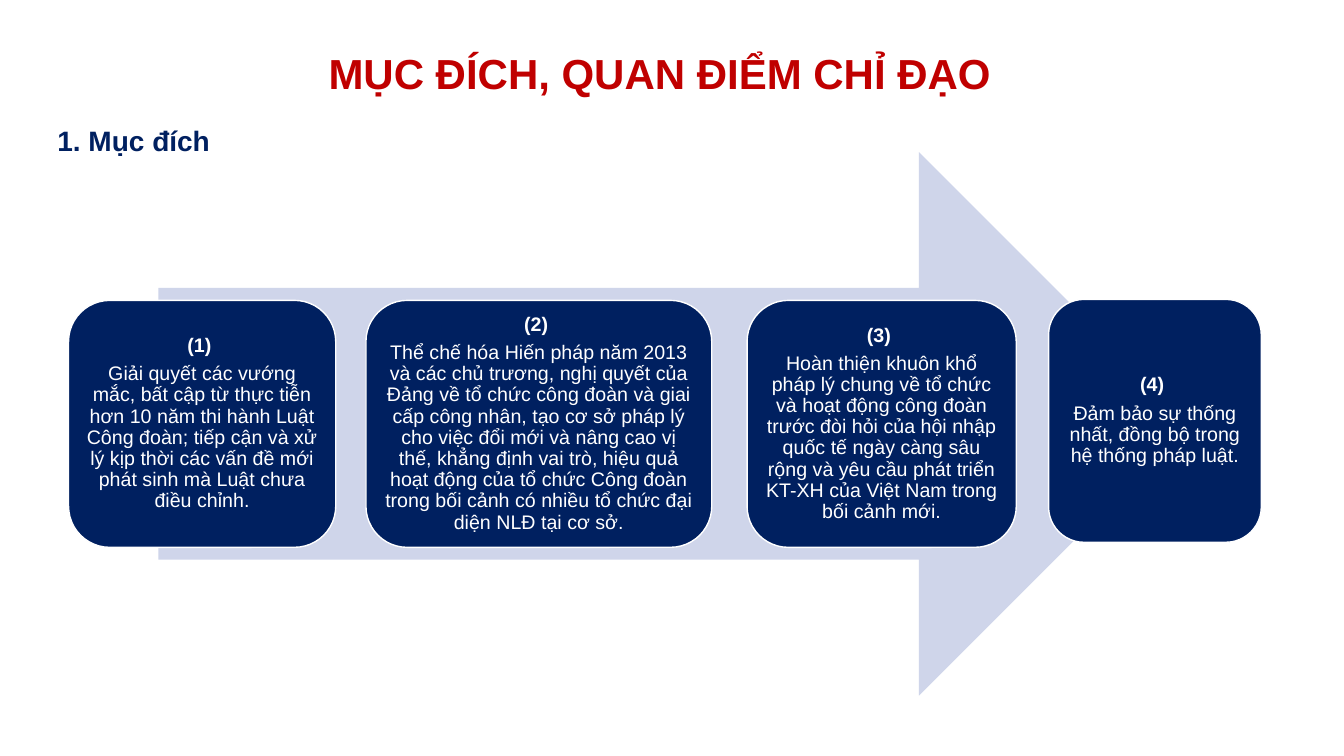
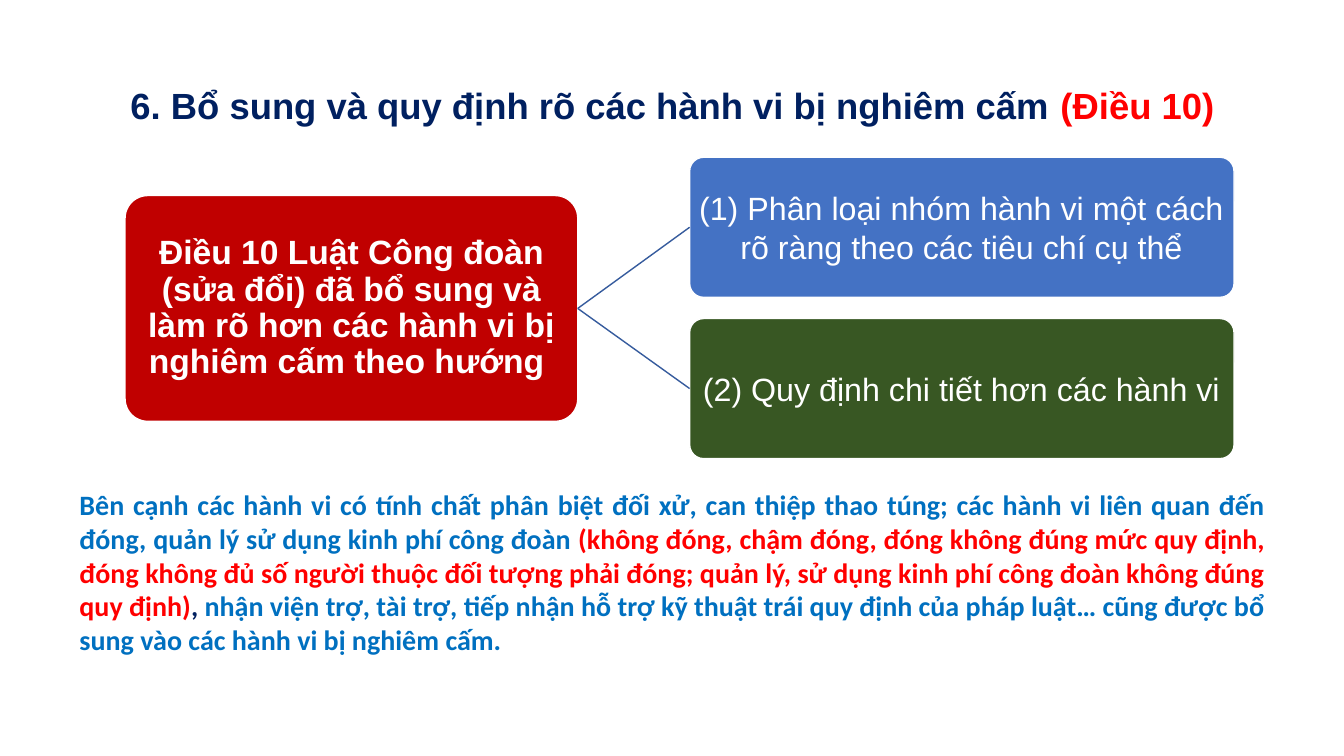
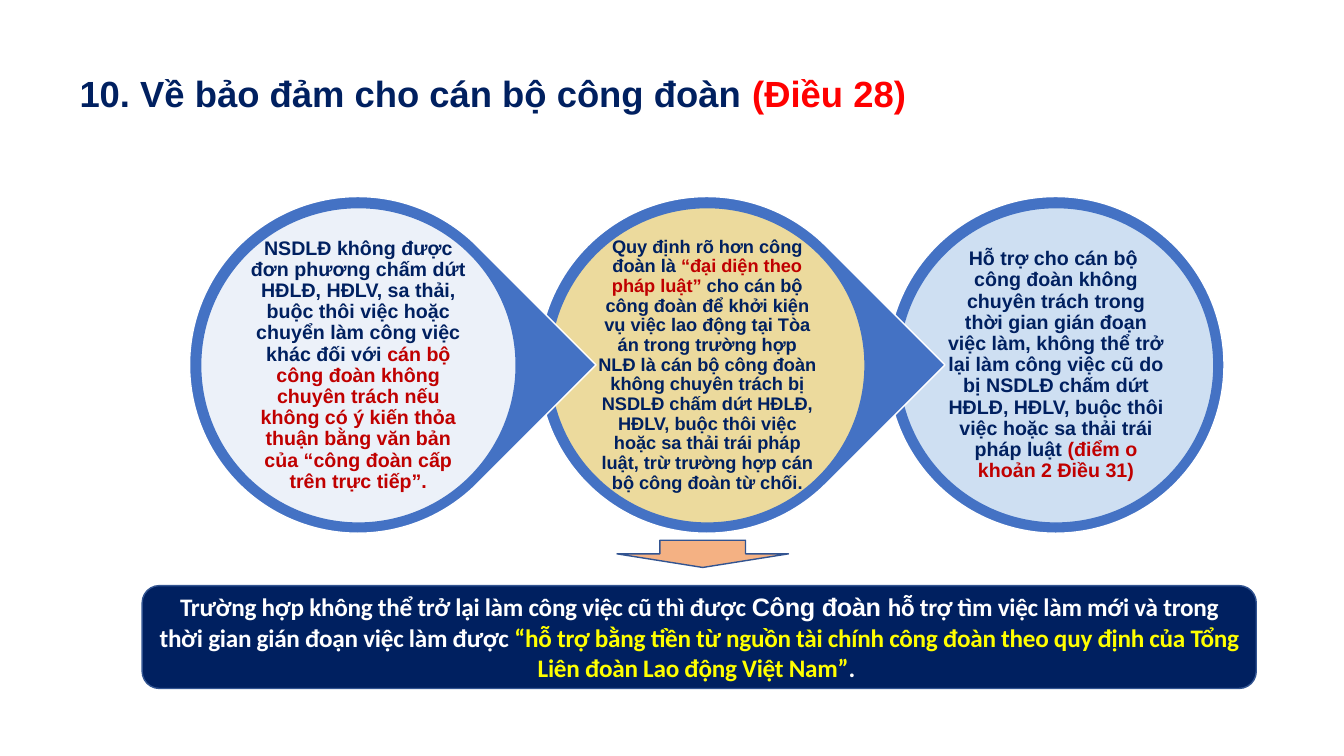
from lxml import etree
from pptx import Presentation
from pptx import util as u
from pptx.dml.color import RGBColor
from pptx.enum import shapes, text
from pptx.oxml import ns

WHITE = RGBColor(0xFF, 0xFF, 0xFF)
NAVY = RGBColor(0x00, 0x20, 0x60)
CRIMSON = RGBColor(0xC0, 0x00, 0x00)
RED = RGBColor(0xFF, 0x00, 0x00)
YELLOW = RGBColor(0xFF, 0xFF, 0x00)
SKY = RGBColor(0x00, 0x70, 0xC0)
BLUE = RGBColor(0x44, 0x72, 0xC4)
LINK_BLUE = RGBColor(0x36, 0x5B, 0x9D)
EDGE_BLUE = RGBColor(0x32, 0x54, 0x91)
GREEN = RGBColor(0x38, 0x57, 0x23)
LAVENDER = RGBColor(0xCF, 0xD5, 0xEA)
PALE_BLUE = RGBColor(0xDE, 0xEB, 0xF7)
SAND = RGBColor(0xFF, 0xE6, 0x99)
PEACH = RGBColor(0xF4, 0xB1, 0x83)

CENTER = text.PP_ALIGN.CENTER
JUSTIFY = text.PP_ALIGN.JUSTIFY
LEFT = text.PP_ALIGN.LEFT
MIDDLE = text.MSO_ANCHOR.MIDDLE
TOP = text.MSO_ANCHOR.TOP
SHAPE = shapes.MSO_SHAPE


def write(box, paragraphs, size=14, font="Arial", color=WHITE, bold=False, align=CENTER,
          anchor=MIDDLE, inset=None, line_spacing=None, space_after=None, tracking=None):
    """Fill a box; each paragraph is a list of (words, format changes) spans."""
    frame = box.text_frame
    frame.word_wrap = True
    frame.vertical_anchor = anchor
    if inset is not None:
        frame.margin_left = frame.margin_right = u.Inches(inset)
        frame.margin_top = frame.margin_bottom = u.Inches(inset)
    for index, spans in enumerate(paragraphs):
        para = frame.paragraphs[0] if index == 0 else frame.add_paragraph()
        para.alignment = align
        if line_spacing is not None:
            para.line_spacing = line_spacing
        if space_after is not None:
            para.space_after = u.Pt(space_after)
        for words, changes in spans:
            for line_number, line in enumerate(words.split("\n")):
                if line_number:
                    para.add_line_break()
                span = para.add_run()
                span.text = line
                span.font.size = u.Pt(size)
                span.font.name = changes.get("font", font)
                span.font.bold = changes.get("bold", bold)
                span.font.color.rgb = changes.get("color", color)
                if tracking is not None:
                    span.font._element.set("spc", str(round(tracking * 100)))


def add_text(page, left, top, width, height, paragraphs, **style):
    box = page.shapes.add_textbox(*map(u.Inches, (left, top, width, height)))
    write(box, paragraphs, **style)


def add_title(page, left, top, width, height, spans, size=26, color=NAVY, **style):
    add_text(page, left, top, width, height, [spans], size=size, color=color, bold=True, **style)


def add_block(page, kind, left, top, width, height, fill, line=None, opacity=None,
              corner=None, rotation=0):
    block = page.shapes.add_shape(kind, *map(u.Inches, (left, top, width, height)))
    block.shadow.inherit = False
    block.rotation = rotation
    block.fill.solid()
    block.fill.fore_color.rgb = fill
    if opacity is not None:
        tint = block._element.spPr.find(ns.qn("a:solidFill"))[0]
        etree.SubElement(tint, ns.qn("a:alpha")).set("val", str(opacity * 1000))
    if line is None:
        block.line.fill.background()
    else:
        block.line.color.rgb = line
        block.line.width = u.Pt(1)
    if corner is not None:
        block.adjustments[0] = corner
    return block


def add_branch(page, parent, child):
    """Join the right side of parent to the left side of child."""
    branch = page.shapes.add_connector(shapes.MSO_CONNECTOR.STRAIGHT, 0, 0, 0, 0)
    branch.begin_connect(parent, 3)
    branch.end_connect(child, 1)
    branch.line.color.rgb = LINK_BLUE
    branch.line.width = u.Pt(1)
    etree.SubElement(branch._element.spPr, ns.qn("a:effectLst"))


def build_purpose(page):
    add_title(page, 0.67, 0.44, 11.75, 0.63, [("MỤC ĐÍCH, QUAN ĐIỂM CHỈ ĐẠO", {})],
              size=30, color=CRIMSON, line_spacing=0.9)
    add_title(page, 0.47, 1.18, 3.77, 0.44, [("1. Mục đích", {})],
              size=20, align=LEFT, anchor=TOP)
    add_block(page, SHAPE.RIGHT_ARROW, 1.57, 1.51, 10.24, 5.39, LAVENDER)
    purposes = [
        (0.68, 2.98, 2.65, 2.45,
         "Giải quyết các vướng mắc, bất cập từ thực tiễn hơn 10 năm thi hành Luật Công đoàn; "
         "tiếp cận và xử lý kịp thời các vấn đề mới phát sinh mà Luật chưa điều chỉnh."),
        (3.63, 2.98, 3.43, 2.45,
         "Thể chế hóa Hiến pháp năm 2013 và các chủ trương, nghị quyết của Đảng về tổ chức "
         "công đoàn và giai cấp công nhân, tạo cơ sở pháp lý cho việc đổi mới và nâng cao vị "
         "thế, khẳng định vai trò, hiệu quả hoạt động của tổ chức Công đoàn trong bối cảnh có "
         "nhiều tổ chức đại diện NLĐ tại cơ sở."),
        (7.41, 2.98, 2.67, 2.45,
         "Hoàn thiện khuôn khổ pháp lý chung về tổ chức và hoạt động công đoàn trước đòi hỏi "
         "của hội nhập quốc tế ngày càng sâu rộng và yêu cầu phát triển KT-XH của Việt Nam "
         "trong bối cảnh mới."),
        (10.4, 2.97, 2.11, 2.41,
         "Đảm bảo sự thống nhất, đồng bộ trong hệ thống pháp luật."),
    ]
    for number, (left, top, width, height, words) in enumerate(purposes, 1):
        card = add_block(page, SHAPE.ROUNDED_RECTANGLE, left, top, width, height, NAVY, WHITE)
        write(card, [[(f"({number}) ", {"bold": True})], [(words, {})]],
              inset=0.06, line_spacing=0.9, space_after=4.9)


def build_prohibitions(page):
    add_title(page, 0.69, 0.76, 11.96, 0.61,
              [("6. Bổ sung và quy định rõ các hành vi bị nghiêm cấm ", {}),
               ("(Điều 10)", {"color": RED})], line_spacing=0.9)
    root = add_block(page, SHAPE.ROUNDED_RECTANGLE, 1.24, 1.94, 4.49, 2.24, CRIMSON, WHITE,
                     corner=0.1)
    write(root, [[("Điều 10 Luật Công đoàn (sửa đổi) đã bổ sung và làm rõ hơn các hành vi bị "
                   "nghiêm cấm theo hướng ", {})]],
          size=24, bold=True, inset=0.02, line_spacing=0.9, space_after=8.4)
    directions = [
        (BLUE, ["(1) Phân loại nhóm hành vi một cách ", "rõ ràng theo các tiêu chí cụ thể"]),
        (GREEN, ["(2) Quy định chi tiết hơn các hành vi"]),
    ]
    for row, (fill, lines) in enumerate(directions):
        child = add_block(page, SHAPE.ROUNDED_RECTANGLE, 6.84, 1.56 + 1.6 * row, 5.4, 1.39,
                          fill, WHITE, corner=0.1)
        write(child, [[(line, {})] for line in lines], size=23, inset=0.02)
        add_branch(page, root, child)
    add_text(page, 0.69, 4.79, 11.96, 2.12, [[
        ("Bên cạnh các hành vi có tính chất phân biệt đối xử, can thiệp thao túng; các hành vi "
         "liên quan đến đóng, quản lý sử dụng kinh phí công đoàn ", {}),
        ("(không đóng, chậm đóng, đóng không đúng mức quy định, đóng không đủ số người thuộc "
         "đối tượng phải đóng; quản lý, sử dụng kinh phí công đoàn không đúng quy định)",
         {"color": RED}),
        (", ", {"color": NAVY}),
        ("nhận viện trợ, tài trợ, tiếp nhận hỗ trợ kỹ thuật trái quy định của pháp luật… cũng "
         "được bổ sung vào các hành vi bị nghiêm cấm.", {}),
    ]], size=20, font="Calibri", color=SKY, bold=True, align=JUSTIFY, anchor=TOP)


def build_guarantees(page):
    add_title(page, 0.69, 0.66, 12.09, 0.53,
              [("10. Về bảo đảm cho cán bộ công đoàn ", {}), ("(Điều 28)", {"color": RED})],
              align=JUSTIFY)
    accent = {"color": CRIMSON}
    guarantees = [
        (SHAPE.TEAR, 45, WHITE, 14, [
            ("NSDLĐ không được đơn phương chấm dứt HĐLĐ, HĐLV, sa thải, buộc thôi việc hoặc "
             "chuyển làm công việc khác đối với ", {}),
            ("cán bộ công đoàn không chuyên trách nếu không có ý kiến thỏa thuận bằng văn bản "
             "của “công đoàn cấp trên trực tiếp”.", accent)]),
        (SHAPE.TEAR, 45, SAND, 13, [
            ("Quy định rõ hơn công đoàn là ", {}),
            ("“đại diện theo pháp luật” ", accent),
            ("cho cán bộ công đoàn để khởi kiện vụ việc lao động tại Tòa án trong trường hợp "
             "NLĐ là cán bộ công đoàn không chuyên trách bị NSDLĐ chấm dứt HĐLĐ, HĐLV, buộc "
             "thôi việc hoặc sa thải trái pháp luật, trừ trường hợp cán bộ công đoàn từ chối.",
             {})]),
        (SHAPE.OVAL, 0, PALE_BLUE, 14, [
            ("Hỗ trợ cho cán bộ \ncông đoàn không chuyên trách trong thời gian gián đoạn việc "
             "làm, không thể trở lại làm công việc cũ do bị NSDLĐ chấm dứt HĐLĐ, HĐLV, buộc "
             "thôi việc hoặc sa thải trái pháp luật ", {}),
            ("(điểm o khoản 2 Điều 31)", accent)]),
    ]
    # Each drop's tip lies over the next circle, so the last one goes to the back.
    for column, (kind, rotation, fill, size, spans) in reversed(list(enumerate(guarantees))):
        left = 1.88 + 3.46 * column
        add_block(page, kind, left, 1.95, 3.34, 3.34, BLUE, WHITE, rotation=rotation)
        disc = add_block(page, SHAPE.OVAL, left + 0.11, 2.06, 3.13, 3.13, fill, BLUE, opacity=90)
        write(disc, [spans], size=size, color=NAVY, bold=True, inset=0.01,
              line_spacing=0.9, space_after=4.9)
    add_block(page, SHAPE.DOWN_ARROW, 6.12, 5.36, 1.7, 0.27, PEACH, EDGE_BLUE)
    banner = add_block(page, SHAPE.ROUNDED_RECTANGLE, 1.41, 5.81, 11.05, 1.02, NAVY, EDGE_BLUE)
    write(banner, [[
        ("Trường hợp không thể trở lại làm công việc cũ thì được ", {}),
        ("Công đoàn ", {"font": "Arial"}),
        ("hỗ trợ tìm việc làm mới và trong thời gian gián đoạn việc làm được ", {}),
        ("“hỗ trợ bằng tiền từ nguồn tài chính công đoàn theo quy định của Tổng Liên đoàn Lao "
         "động Việt Nam”", {"color": YELLOW}),
        (". ", {}),
    ]], size=18, font="Calibri", bold=True, tracking=-0.2)


def main():
    deck = Presentation()
    deck.slide_width = u.Inches(13.33)
    deck.slide_height = u.Inches(7.5)
    for build in (build_purpose, build_prohibitions, build_guarantees):
        build(deck.slides.add_slide(deck.slide_layouts[6]))
    deck.save("out.pptx")


if __name__ == "__main__":
    main()
